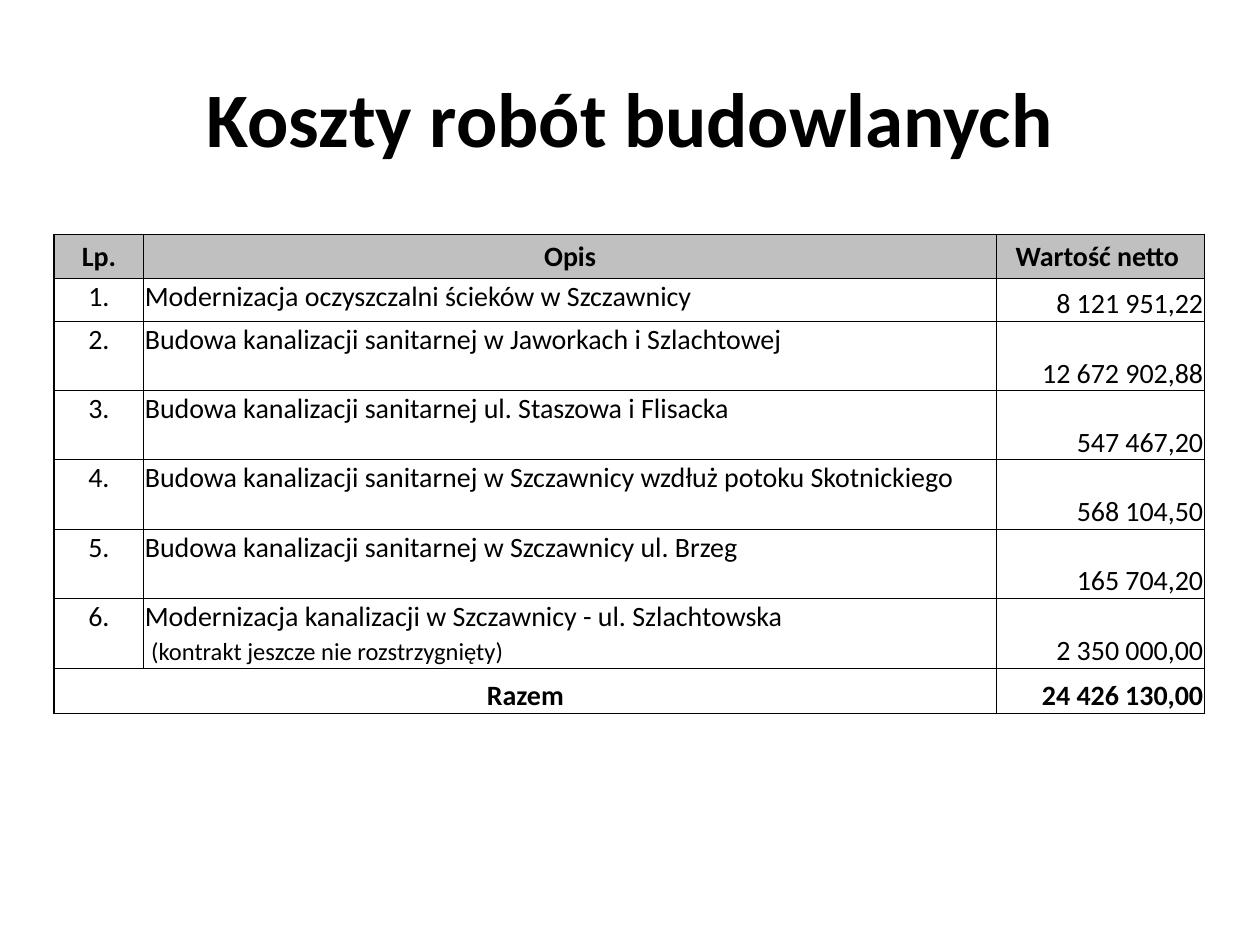
from lxml import etree
from pptx import Presentation
from pptx.dml.color import RGBColor
from pptx.enum.text import MSO_ANCHOR, PP_ALIGN
from pptx.oxml.ns import qn
from pptx.util import Inches, Pt

LEFT, CENTER, RIGHT = PP_ALIGN.LEFT, PP_ALIGN.CENTER, PP_ALIGN.RIGHT
TOP, MIDDLE, BOTTOM = MSO_ANCHOR.TOP, MSO_ANCHOR.MIDDLE, MSO_ANCHOR.BOTTOM
BLACK = RGBColor(0x00, 0x00, 0x00)
WHITE = RGBColor(0xFF, 0xFF, 0xFF)
GRAY = RGBColor(0xC0, 0xC0, 0xC0)
FONT = "Calibri"
SLIDE_WIDTH, SLIDE_HEIGHT = Inches(10), Inches(7.5)
TITLE_BOX = (Inches(0.5), Inches(0.3), Inches(9), Inches(1.25))
TABLE_BOX = (Inches(0.43), Inches(1.86), Inches(9.13), Inches(3.8))
COLUMN_PARTS = (0.71, 6.77, 1.65)
ROW_PARTS = (0.35, 0.34, 0.55, 0.55, 0.55, 0.55, 0.55, 0.36)
INNER_LINE, OUTER_LINE = Pt(0.5), Pt(1)
TITLE = "Koszty robót budowlanych"
HEADERS = ("Lp.", "Opis", "Wartość netto ")
COSTS = (
    ("Modernizacja oczyszczalni ścieków w Szczawnicy", "8 121 951,22"),
    ("Budowa kanalizacji sanitarnej w Jaworkach i Szlachtowej", "12 672 902,88"),
    ("Budowa kanalizacji sanitarnej ul. Staszowa i Flisacka", "547 467,20"),
    ("Budowa kanalizacji sanitarnej w Szczawnicy wzdłuż potoku Skotnickiego", "568 104,50"),
    ("Budowa kanalizacji sanitarnej w Szczawnicy ul. Brzeg", "165 704,20"),
    ("Modernizacja kanalizacji w Szczawnicy - ul. Szlachtowska", "2 350 000,00"),
)
CONTRACT_NOTE = "(kontrakt jeszcze nie rozstrzygnięty)"
TOTAL = ("Razem", "24 426 130,00")


def write(paragraph, text, size=16, bold=False, align=LEFT):
    paragraph.alignment = align
    run = paragraph.add_run()
    run.text = text
    run.font.name = FONT
    run.font.size = Pt(size)
    run.font.bold = bold
    run.font.color.rgb = BLACK


def add_border(cell, side, width):
    line = etree.SubElement(cell._tc.get_or_add_tcPr(), qn(f"a:ln{side}"), w=str(width))
    fill = etree.SubElement(line, qn("a:solidFill"))
    etree.SubElement(fill, qn("a:srgbClr"), val=str(BLACK))


def style_cells(table):
    last_row, last_column = len(ROW_PARTS) - 1, len(COLUMN_PARTS) - 1
    for row in range(last_row + 1):
        for column in range(last_column + 1):
            cell = table.cell(row, column)
            cell.margin_left = cell.margin_right = cell.margin_top = Inches(0.01)
            cell.margin_bottom = 0
            outer_sides = {
                "L": column == 0,
                "R": column == last_column,
                "T": row == 0,
                "B": row == last_row,
            }
            for side, is_outer in outer_sides.items():
                add_border(cell, side, OUTER_LINE if is_outer else INNER_LINE)
            cell.fill.solid()
            cell.fill.fore_color.rgb = GRAY if row == 0 else WHITE


def fill_cell(cell, text, anchor=TOP, **text_format):
    cell.vertical_anchor = anchor
    write(cell.text_frame.paragraphs[0], text, **text_format)


def place_title(slide, box):
    title = slide.shapes.title
    title.left, title.top, title.width, title.height = box
    title.text_frame.vertical_anchor = MIDDLE
    write(title.text_frame.paragraphs[0], TITLE, size=44, bold=True, align=CENTER)


def place_cost_table(slide, box):
    table = slide.shapes.add_table(len(ROW_PARTS), len(COLUMN_PARTS), *box).table
    for column, part in zip(table.columns, COLUMN_PARTS):
        column.width = int(box[2] * part / sum(COLUMN_PARTS))
    for row, part in zip(table.rows, ROW_PARTS):
        row.height = int(box[3] * part / sum(ROW_PARTS))
    style_cells(table)

    for column, header in enumerate(HEADERS):
        fill_cell(table.cell(0, column), header, MIDDLE, bold=True, align=CENTER)
    for row, (description, value) in enumerate(COSTS, start=1):
        fill_cell(table.cell(row, 0), f"{row}.", align=CENTER)
        fill_cell(table.cell(row, 1), description)
        fill_cell(table.cell(row, 2), value, BOTTOM, align=RIGHT)
    note = table.cell(len(COSTS), 1).text_frame.add_paragraph()
    write(note, " ")
    write(note, CONTRACT_NOTE, size=14)

    total_row = len(ROW_PARTS) - 1
    table.cell(total_row, 0).merge(table.cell(total_row, 1))
    fill_cell(table.cell(total_row, 0), TOTAL[0], BOTTOM, bold=True, align=CENTER)
    fill_cell(table.cell(total_row, 2), TOTAL[1], BOTTOM, bold=True, align=RIGHT)


def main():
    presentation = Presentation()
    presentation.slide_width, presentation.slide_height = SLIDE_WIDTH, SLIDE_HEIGHT
    slide = presentation.slides.add_slide(presentation.slide_layouts.get_by_name("Title Only"))
    place_title(slide, TITLE_BOX)
    place_cost_table(slide, TABLE_BOX)
    presentation.save("out.pptx")


if __name__ == "__main__":
    main()
